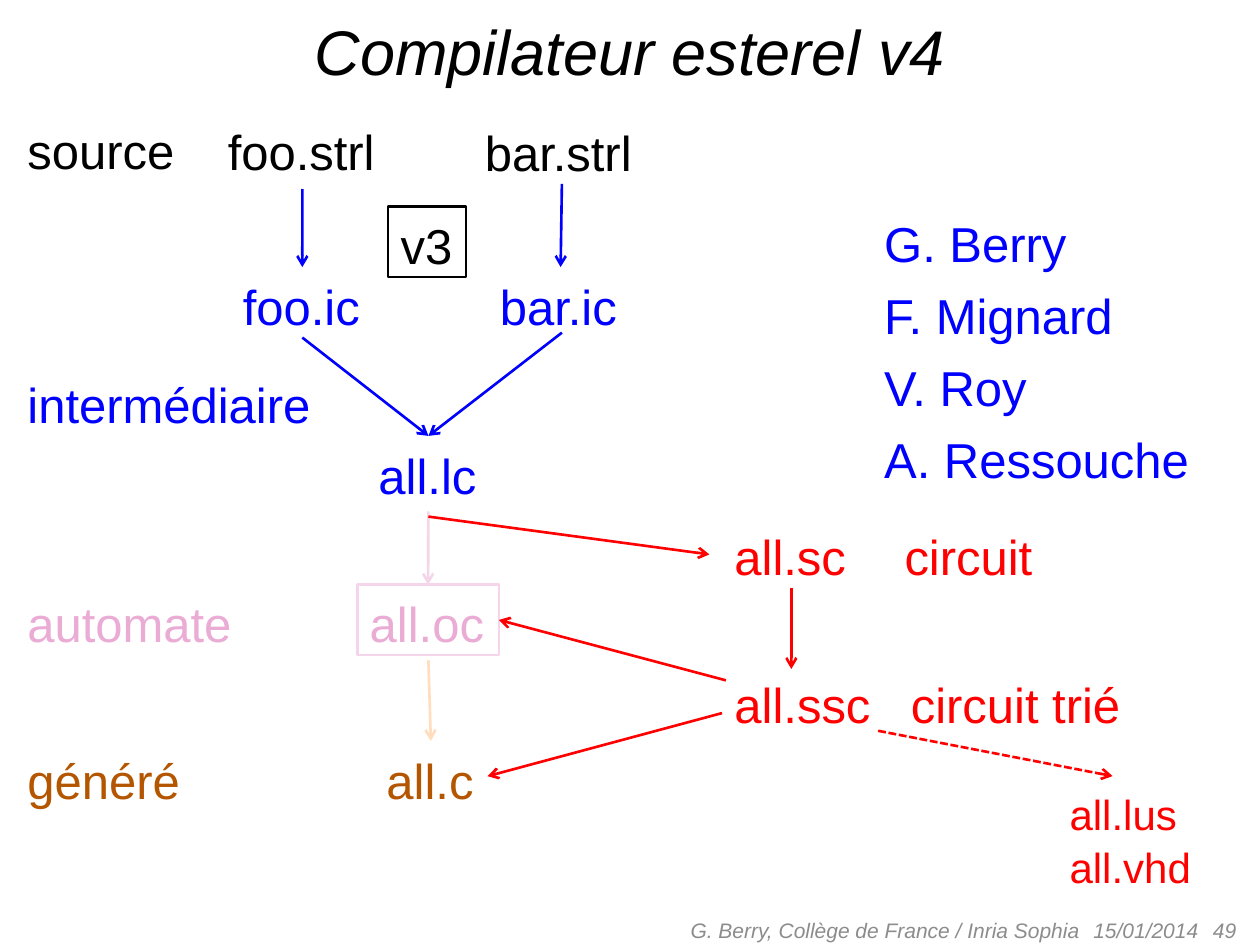
from collections import namedtuple
from dataclasses import dataclass

from lxml.etree import SubElement
from pptx import Presentation
from pptx.dml.color import RGBColor
from pptx.enum.dml import MSO_LINE
from pptx.enum.shapes import MSO_CONNECTOR, MSO_SHAPE
from pptx.enum.text import MSO_ANCHOR, MSO_AUTO_SIZE, PP_ALIGN
from pptx.oxml.ns import qn
from pptx.util import Pt

Box = namedtuple("Box", "x y w h")
TOP, LEFT, BOTTOM, RIGHT = range(4)


@dataclass(frozen=True)
class Theme:
    font: str = "Arial"
    black: str = "000000"
    grey: str = "8C8C8C"
    blue: str = "0000FF"
    red: str = "FF0000"
    pink: str = "EAACD5"
    pale_pink: str = "F5D5EA"
    brown: str = "B45600"
    pale_orange: str = "FFDDBD"
    title: float = 36
    body: float = 28
    small: float = 24
    footer: float = 12
    line: float = 1.5
    label_h: float = 40.3


T = Theme()


def apply(obj, values):
    for name, value in values.items():
        setattr(obj, name, value)


def write(tf, lines, size, color, italic=False, **para):
    for i, line in enumerate(lines):
        p = tf.paragraphs[0] if i == 0 else tf.add_paragraph()
        apply(p, para)
        r = p.add_run()
        r.text = line
        apply(r.font, {"name": T.font, "size": Pt(size), "italic": italic})
        r.font.color.rgb = RGBColor.from_string(color)


def label(s, box, dx, dy, w, text, color, h=T.label_h, size=T.body,
          outline=None, before=6):
    place = Pt(box.x + dx), Pt(box.y + dy), Pt(w), Pt(h)
    if outline:
        sp = s.shapes.add_shape(MSO_SHAPE.RECTANGLE, *place)
        sp.shadow.inherit = False
        sp.fill.background()
        sp.line.color.rgb = RGBColor.from_string(outline)
        sp.line.width = Pt(T.line)
    else:
        sp = s.shapes.add_textbox(*place)
    apply(sp.text_frame, {"word_wrap": False, "vertical_anchor": MSO_ANCHOR.TOP,
                          "auto_size": MSO_AUTO_SIZE.SHAPE_TO_FIT_TEXT})
    write(sp.text_frame, text.split("\n"), size, color, line_spacing=1.05,
          space_before=Pt(before), alignment=PP_ALIGN.LEFT)
    return sp


def arrow(s, box, start, end, color, dash=None):
    points = [(0, 0) if hasattr(e[0], "shape_id") else (box.x + e[0], box.y + e[1])
              for e in (start, end)]
    cn = s.shapes.add_connector(MSO_CONNECTOR.STRAIGHT,
                                *(Pt(v) for point in points for v in point))
    for e, join in ((start, cn.begin_connect), (end, cn.end_connect)):
        if hasattr(e[0], "shape_id"):
            join(*e)
    cn.line.color.rgb = RGBColor.from_string(color)
    apply(cn.line, {"width": Pt(T.line), "dash_style": dash})
    SubElement(cn.line._get_or_add_ln(), qn("a:tailEnd"), type="arrow")
    SubElement(cn._element.spPr, qn("a:effectLst"))


def title(s, box, text):
    sp = s.shapes.title
    apply(sp, {"left": Pt(box.x), "top": Pt(box.y),
               "width": Pt(box.w), "height": Pt(box.h)})
    apply(sp.text_frame, {"word_wrap": True, "vertical_anchor": MSO_ANCHOR.TOP,
                          "auto_size": MSO_AUTO_SIZE.SHAPE_TO_FIT_TEXT})
    write(sp.text_frame, [text], T.title, T.black, True, alignment=PP_ALIGN.CENTER)


def footer(s, box):
    for dx, w, text, align in (
        (285.8, 167.8, "15/01/2014", PP_ALIGN.LEFT),
        (213.8, 167.8, "49", PP_ALIGN.RIGHT),
        (0, 292.3, "G. Berry, Collège de France / Inria Sophia", PP_ALIGN.RIGHT),
    ):
        sp = s.shapes.add_textbox(Pt(box.x + dx), Pt(box.y), Pt(w), Pt(box.h))
        apply(sp.text_frame, {"word_wrap": True, "vertical_anchor": MSO_ANCHOR.MIDDLE})
        write(sp.text_frame, [text], T.footer, T.grey, True, alignment=align)


def sources(s, box):
    label(s, box, 0, 0, 99.4, "source", T.black)
    label(s, box, 114.5, 0.7, 99.4, "foo.strl", T.black)
    label(s, box, 261.4, 1.4, 100.8, "bar.strl", T.black)
    label(s, box, 213.2, 54.7, 44.6, "v3", T.black, outline=T.black)


def intermediate(s, box):
    label(s, box, 0, 100.8, 178.6, "intermédiaire", T.blue)
    foo = label(s, box, 123.1, 44.6, 82.1, "foo.ic", T.blue)
    bar = label(s, box, 270, 44.6, 83.5, "bar.ic", T.blue)
    linked = label(s, box, 200.6, 141.1, 71.3, "all.lc", T.blue)
    arrow(s, box, (164.2, 0), (foo, TOP), T.blue)
    arrow(s, box, (312.5, -2.9), (bar, TOP), T.blue)
    arrow(s, box, (foo, BOTTOM), (linked, TOP), T.blue)
    arrow(s, box, (312.5, 82.1), (linked, TOP), T.blue)


def automaton(s, box):
    label(s, box, 0, 41.8, 132.5, "automate", T.pink)
    oc = label(s, box, 195.6, 41.8, 80.9, "all.oc", T.pink, outline=T.pale_pink)
    arrow(s, box, (236.2, 0), (oc, TOP), T.pale_pink)
    return oc


def generated(s, box):
    label(s, box, 0, 46.1, 103, "généré", T.brown)
    code = label(s, box, 205.2, 46.1, 64.8, "all.c", T.brown)
    arrow(s, box, (236.2, 0), (code, TOP), T.pale_orange)
    return code


def circuits(s, box, oc, code):
    sc = label(s, box, 167.8, 0.7, 79.2, "all.sc", T.red)
    label(s, box, 265, 0.7, 88.6, "circuit", T.red)
    label(s, box, 167.8, 85, 92.9, "all.ssc", T.red)
    label(s, box, 268.6, 85, 135.4, "circuit trié", T.red)
    label(s, box, 359.3, 150.5, 85, "all.lus\nall.vhd", T.red,
          h=65.5, size=T.small, before=0)
    arrow(s, box, (0, 0), (160.6, 21.6), T.red)
    arrow(s, box, (sc, BOTTOM), (207.4, 87.1), T.red)
    arrow(s, box, (170, 93.6), (oc, RIGHT), T.red)
    arrow(s, box, (167.8, 112.3), (code, RIGHT), T.red)
    arrow(s, box, (257, 122.4), (391, 148.3), T.red, MSO_LINE.SQUARE_DOT)


def authors(s, box):
    label(s, box, 0, 0, box.w, "G. Berry\nF. Mignard\nV. Roy\nA. Ressouche",
          T.blue, h=box.h)


def main():
    prs = Presentation()
    apply(prs, {"slide_width": Pt(720), "slide_height": Pt(540)})
    s = prs.slides.add_slide(prs.slide_layouts[5])
    title(s, Box(18, 3.6, 684, 51.1), "Compilateur esterel v4")
    sources(s, Box(8.6, 63.4, 362, 95))
    intermediate(s, Box(8.6, 108, 354, 181.4))
    oc = automaton(s, Box(8.6, 292.3, 277, 82.1))
    code = generated(s, Box(8.6, 377.3, 270, 86.4))
    circuits(s, Box(244.8, 295.2, 444.3, 216), oc, code)
    authors(s, Box(498.2, 116.6, 190.8, 203))
    footer(s, Box(331.9, 517.3, 453.6, 28.8))
    prs.save("out.pptx")


if __name__ == "__main__":
    main()
